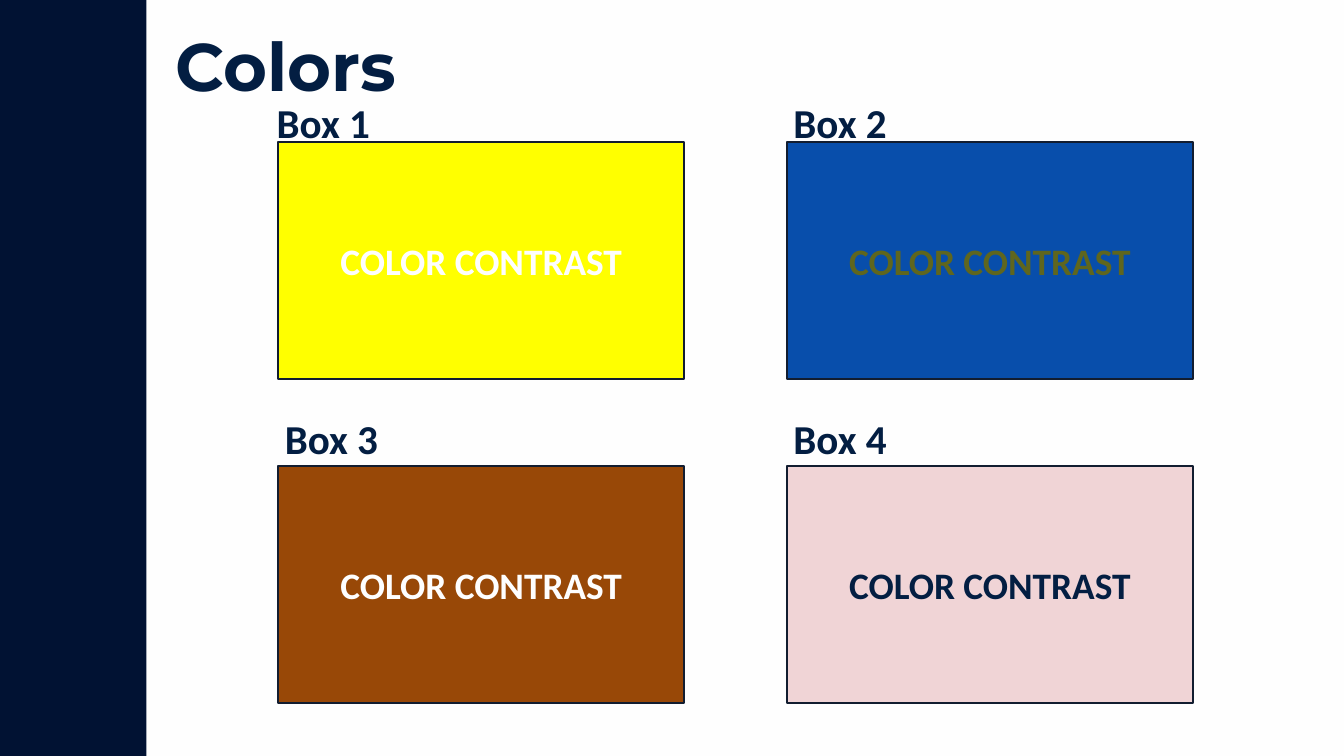
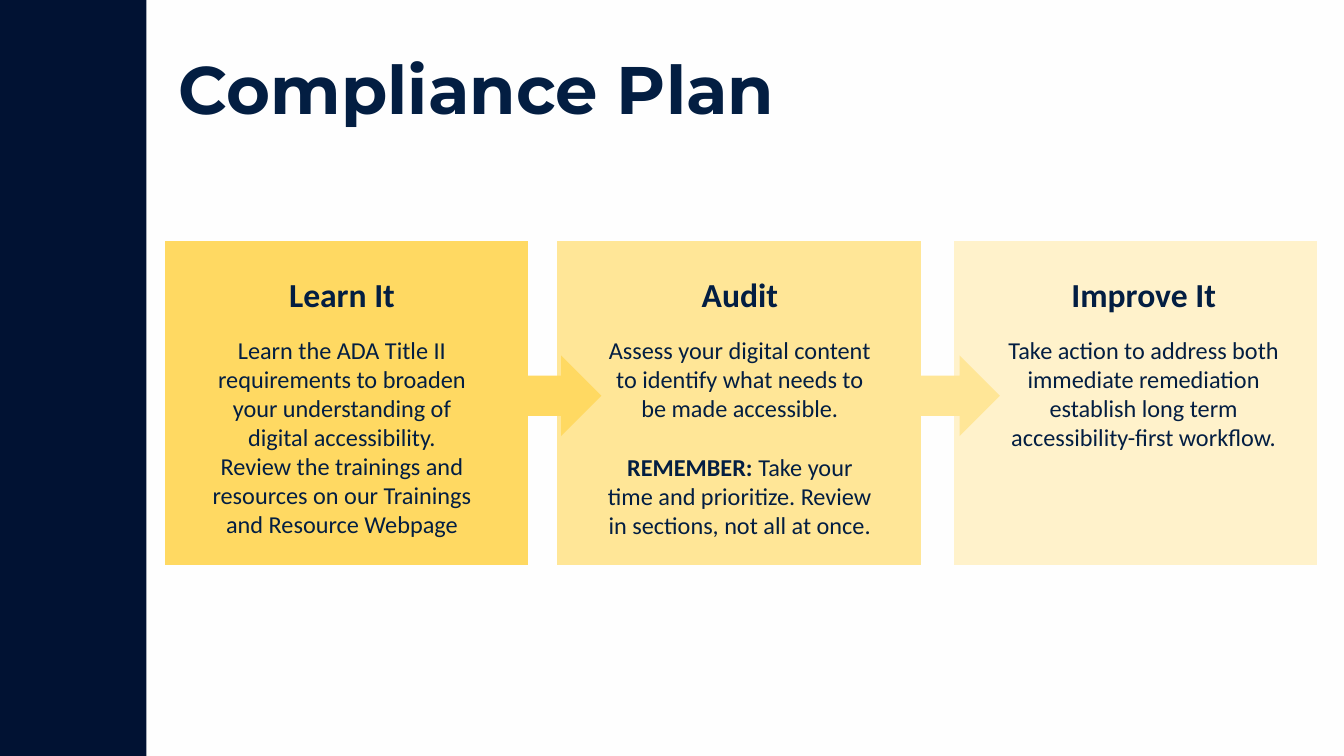
from pptx import Presentation
from pptx.dml.color import RGBColor
from pptx.enum.shapes import MSO_SHAPE
from pptx.enum.text import MSO_ANCHOR, MSO_AUTO_SIZE, PP_ALIGN
from pptx.util import Emu, Pt

PX = 9144
SLIDE_WIDTH, SLIDE_HEIGHT = 2000, 1125

COLORS = {
    "paper": "FEFEFE", "band": "011233", "navy": "031E42", "outline": "121D30",
    "yellow": "FFFF00", "blue": "084EAB", "brown": "984807", "pink": "F0D4D6",
    "olive": "5F661E", "gold": "FFD962", "sand": "FFE697", "cream": "FFF2CB",
}

STYLES = {
    "title": {"name": "Montserrat", "size": Pt(72), "bold": True},
    "label": {"name": "Calibri", "size": Pt(44), "bold": True},
    "sample": {"name": "Calibri", "size": Pt(40), "bold": True},
    "heading": {"name": "Calibri", "size": Pt(36), "bold": True},
    "body": {"name": "Calibri", "size": Pt(26), "bold": False},
    "strong": {"name": "Calibri", "size": Pt(26), "bold": True},
}

SAMPLE_TEXT = "COLOR CONTRAST"
CONTRAST_BOXES = [
    ("Box 1", 402, "yellow", "paper"),
    ("Box 2", 1171, "blue", "olive"),
    ("Box 3", 414, "brown", "paper"),
    ("Box 4", 1171, "pink", "navy"),
]
BOX_COLUMNS, BOX_ROWS, LABEL_ROWS = (414, 1171), (211, 693), (140, 610)
BOX_SIZE, LABEL_SIZE = (604, 353), (277, 84)

STEPS = [
    ("Learn It", "gold", 245, (304, 403, 410, 414), [
        (0, [("body", "Learn the ADA Title II requirements to broaden your understanding "
                      "of digital accessibility. Review the trainings and resources on "
                      "our Trainings and Resource Webpage")]),
    ]),
    ("Audit", "sand", 829, (890, 403, 422, 407), [
        (0, [("body", "Assess your digital content to identify what needs to be made "
                      "accessible.")]),
        (32, [("strong", "REMEMBER:"),
              ("body", " Take your time and prioritize. Review in sections, "
                       "not all at once.")]),
    ]),
    ("Improve It", "cream", 1419, (1488, 403, 428, 276), [
        (0, [("body", "Take action to address both immediate remediation establish "
                      "long term accessibility-first workflow.")]),
    ]),
]
STEP_TOP, STEP_SIZE, HEADING_GAP = 359, (541, 482), 22
ARROW_LEFTS, ARROW_TOP, ARROW_SIZE = (719, 1312), 529, (176, 120)


def emu(*lengths):
    return [Emu(length * PX) for length in lengths]


def rgb(color):
    return RGBColor.from_string(COLORS[color])


def apply(target, values):
    for attribute, value in values.items():
        setattr(target, attribute, value)


def write(paragraph, text, style, color="navy"):
    run = paragraph.add_run()
    run.text = text
    apply(run.font, STYLES[style])
    run.font.color.rgb = rgb(color)


def add_panel(slide, preset, place, fill, outline=None):
    panel = slide.shapes.add_shape(preset, *emu(*place))
    panel.shadow.inherit = False
    panel.fill.solid()
    panel.fill.fore_color.rgb = rgb(fill)
    if outline:
        panel.line.color.rgb = rgb(outline)
        panel.line.width = Pt(2)
    else:
        panel.line.fill.background()
    return panel


def add_text(slide, place):
    frame = slide.shapes.add_textbox(*emu(*place)).text_frame
    apply(frame, {"word_wrap": True, "auto_size": MSO_AUTO_SIZE.SHAPE_TO_FIT_TEXT})
    return frame


def add_slide(prs, layout, title, place):
    slide = prs.slides.add_slide(layout)
    heading = slide.shapes.title
    apply(heading, dict(zip(("left", "top", "width", "height"), emu(*place))))
    inset = Emu(8 * PX)
    apply(heading.text_frame, {
        "vertical_anchor": MSO_ANCHOR.TOP, "auto_size": MSO_AUTO_SIZE.NONE,
        "word_wrap": True, "margin_left": inset, "margin_top": inset,
    })
    paragraph = heading.text_frame.paragraphs[0]
    apply(paragraph, {"alignment": PP_ALIGN.LEFT, "space_before": Pt(0)})
    write(paragraph, title, "title")
    return slide


def add_contrast_boxes(slide):
    for index, (_, _, fill, ink) in enumerate(CONTRAST_BOXES):
        row, column = divmod(index, 2)
        place = (BOX_COLUMNS[column], BOX_ROWS[row], *BOX_SIZE)
        box = add_panel(slide, MSO_SHAPE.RECTANGLE, place, fill, "outline")
        box.text_frame.vertical_anchor = MSO_ANCHOR.MIDDLE
        sample = box.text_frame.paragraphs[0]
        sample.alignment = PP_ALIGN.CENTER
        write(sample, SAMPLE_TEXT, "sample", ink)
    for index, (label, left, _, _) in enumerate(CONTRAST_BOXES):
        frame = add_text(slide, (left, LABEL_ROWS[index // 2], *LABEL_SIZE))
        write(frame.paragraphs[0], label, "label")


def add_steps(slide):
    for _, fill, left, _, _ in STEPS:
        add_panel(slide, MSO_SHAPE.FLOWCHART_PROCESS, (left, STEP_TOP, *STEP_SIZE), fill)
    for left, (_, fill, *_) in zip(ARROW_LEFTS, STEPS):
        add_panel(slide, MSO_SHAPE.RIGHT_ARROW, (left, ARROW_TOP, *ARROW_SIZE), fill)
    for heading, _, _, place, passages in STEPS:
        frame = add_text(slide, place)
        first = frame.paragraphs[0]
        first.alignment = PP_ALIGN.CENTER
        first.space_after = Pt(HEADING_GAP)
        write(first, heading, "heading")
        for gap, pieces in passages:
            passage = frame.add_paragraph()
            apply(passage, {"alignment": PP_ALIGN.CENTER, "space_before": Pt(gap)})
            for style, text in pieces:
                write(passage, text, style)


def main():
    prs = Presentation()
    prs.slide_width, prs.slide_height = emu(SLIDE_WIDTH, SLIDE_HEIGHT)
    layout = prs.slide_layouts.get_by_name("Title Only")
    layout.background.fill.solid()
    layout.background.fill.fore_color.rgb = rgb("paper")

    colors_slide = add_slide(prs, layout, "Colors", (253, 28, 1636, 136))
    band = add_panel(colors_slide, MSO_SHAPE.RECTANGLE, (0, 0, 218, SLIDE_HEIGHT), "band")
    layout.shapes.element.append(band.element)
    add_contrast_boxes(colors_slide)

    plan_slide = add_slide(prs, layout, "Compliance Plan", (258, 62, 1275, 133))
    add_steps(plan_slide)
    prs.save("out.pptx")


if __name__ == "__main__":
    main()
